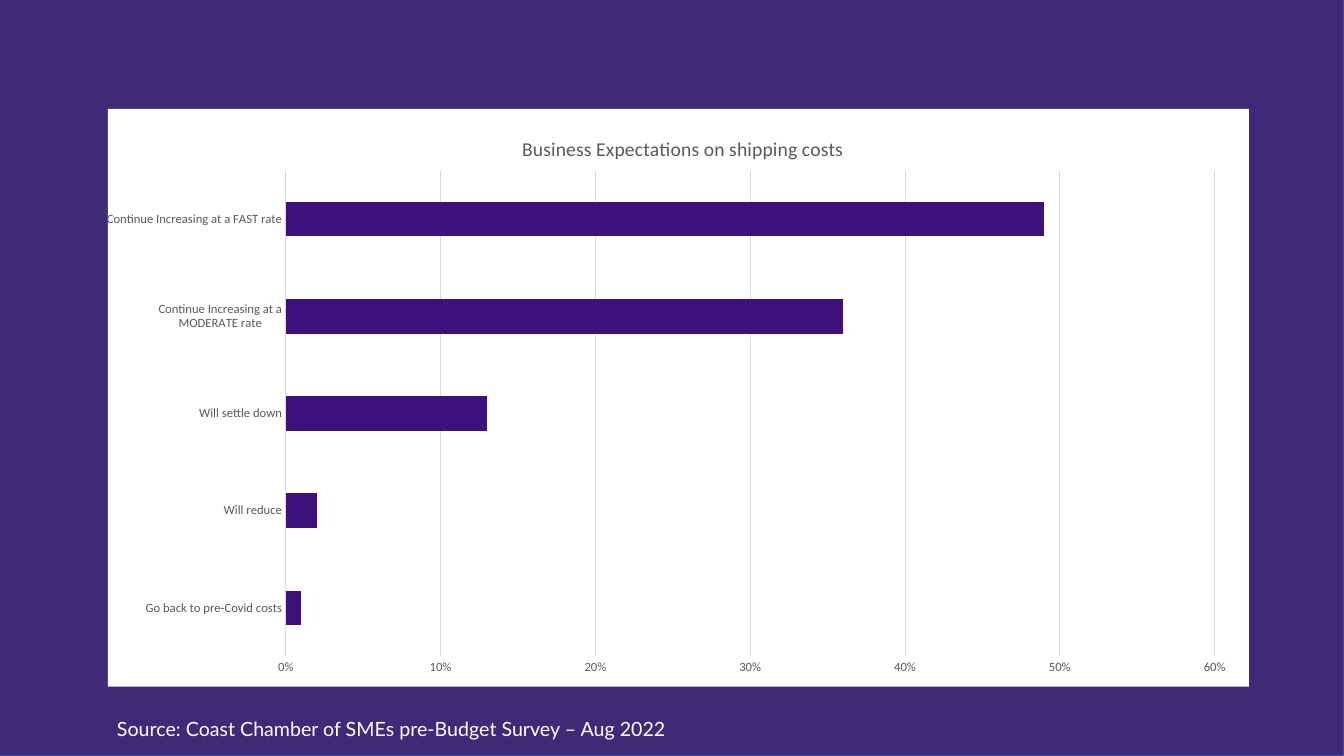
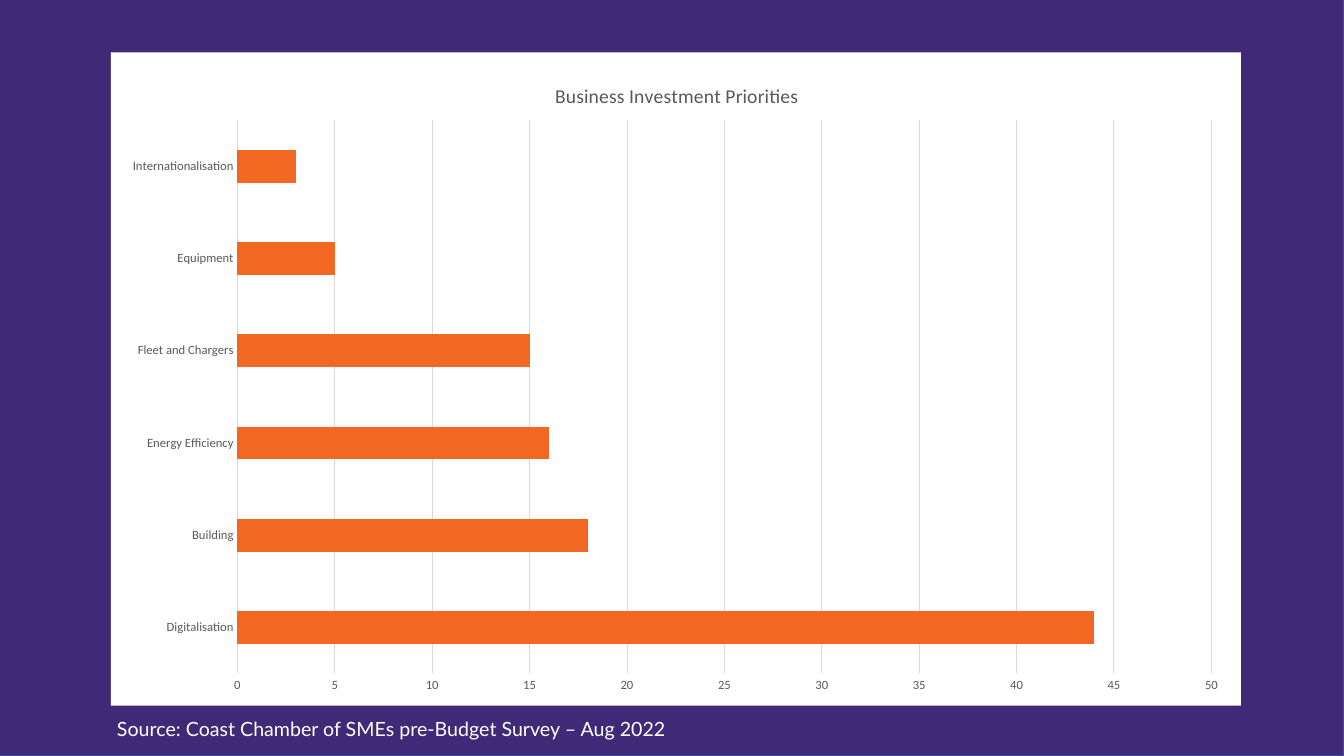
from dataclasses import dataclass

from lxml import etree
from pptx import Presentation
from pptx.chart.chart import Chart
from pptx.chart.data import CategoryChartData
from pptx.dml.color import RGBColor
from pptx.enum.chart import XL_CHART_TYPE, XL_TICK_MARK
from pptx.enum.shapes import MSO_SHAPE
from pptx.enum.text import MSO_ANCHOR, MSO_AUTO_SIZE, PP_ALIGN
from pptx.oxml import parse_xml
from pptx.oxml.ns import nsdecls, qn
from pptx.slide import Slide
from pptx.util import Pt

BAR = XL_CHART_TYPE.BAR_CLUSTERED
NO_TICK = XL_TICK_MARK.NONE
RECT = MSO_SHAPE.RECTANGLE
MIDDLE = MSO_ANCHOR.MIDDLE
NO_FIT = MSO_AUTO_SIZE.NONE
LEFT = PP_ALIGN.LEFT

TITLE_ONLY = 5
COLORS = {
    "backdrop": "402A78",
    "edge": "325491",
    "white": "FFFFFF",
    "text": "595959",
    "grid": "D9D9D9",
    "purple": "3C117C",
    "orange": "F26722",
}
SOURCE = "Source: Coast Chamber of SMEs pre-Budget Survey – Aug 2022"


@dataclass
class Box:
    x: float
    y: float
    w: float
    h: float

    def emu(self) -> tuple[Pt, Pt, Pt, Pt]:
        return Pt(self.x), Pt(self.y), Pt(self.w), Pt(self.h)


@dataclass
class BarChart:
    title: str
    box: Box
    plot: Box
    title_x: float
    values: dict[str, float]
    color: str
    maximum: float
    step: float
    number_format: str


BACKDROP = Box(-1.44, -3.6, 961.2, 543.6)
FOOTER = Box(76.3, 509, 602.6, 25.2)
TITLE_Y = 0.04

CHARTS = [
    BarChart(
        "Business Expectations on shipping costs",
        Box(76.3, 77.8, 815.8, 412.6),
        Box(0.156, 0.107, 0.814, 0.841),
        0.36,
        {
            "Go back to pre-Covid costs": 0.01,
            "Will reduce": 0.02,
            "Will settle down": 0.13,
            "Continue Increasing at a MODERATE rate": 0.36,
            "Continue Increasing at a FAST rate": 0.49,
        },
        "purple", 0.6, 0.1, "0%",
    ),
    BarChart(
        "Business Investment Priorities",
        Box(79.2, 37.4, 807.1, 466.6),
        Box(0.112, 0.104, 0.862, 0.847),
        0.39,
        {
            "Digitalisation": 44,
            "Building": 18,
            "Energy Efficiency": 16,
            "Fleet and Chargers": 15,
            "Equipment": 5,
            "Internationalisation": 3,
        },
        "orange", 50, 5, "General",
    ),
]


def rgb(name: str) -> RGBColor:
    return RGBColor.from_string(COLORS[name])


def set_font(font, name: str, size: float, color: str) -> None:
    font.name = name
    font.size = Pt(size)
    font.bold = False
    font.color.rgb = rgb(color)


def set_line(line, color: str, width: float) -> None:
    line.color.rgb = rgb(color)
    line.width = Pt(width)


def set_layout(parent, index: int, settings: dict[str, str]) -> None:
    old = parent.find(qn("c:layout"))
    if old is not None:
        parent.remove(old)
    layout = parse_xml(f"<c:layout {nsdecls('c')}><c:manualLayout/></c:layout>")
    for tag, value in settings.items():
        etree.SubElement(layout[0], qn(f"c:{tag}")).set("val", value)
    parent.insert(index, layout)


def fill_chart_area(chart: Chart) -> None:
    area = parse_xml(
        f"<c:spPr {nsdecls('c', 'a')}><a:solidFill>"
        f'<a:srgbClr val="{COLORS["white"]}"/></a:solidFill>'
        "<a:ln><a:noFill/></a:ln></c:spPr>"
    )
    chart.element.find(qn("c:txPr")).addprevious(area)


def add_backdrop(s: Slide) -> None:
    sp = s.shapes.add_shape(RECT, *BACKDROP.emu())
    sp.shadow.inherit = False
    sp.fill.solid()
    sp.fill.fore_color.rgb = rgb("backdrop")
    set_line(sp.line, "edge", 1)
    s.shapes.title.element.addprevious(sp.element)


def set_source(s: Slide) -> None:
    sp = s.shapes.title
    sp.left, sp.top, sp.width, sp.height = FOOTER.emu()
    tf = sp.text_frame
    tf.text = SOURCE
    tf.word_wrap = True
    tf.auto_size = NO_FIT
    tf.vertical_anchor = MIDDLE
    p = tf.paragraphs[0]
    p.alignment = LEFT
    p.line_spacing = 0.9
    set_font(p.font, "Lato", 14, "white")


def style_axes(chart: Chart, item: BarChart) -> None:
    cat, val = chart.category_axis, chart.value_axis
    for axis in (cat, val):
        axis.major_tick_mark = NO_TICK
        axis.minor_tick_mark = NO_TICK
        set_font(axis.tick_labels.font, "Calibri", 9, "text")
    cat.has_major_gridlines = False
    set_line(cat.format.line, "grid", 0.75)
    val.minimum_scale = 0
    val.maximum_scale = item.maximum
    val.major_unit = item.step
    val.has_major_gridlines = True
    set_line(val.major_gridlines.format.line, "grid", 0.75)
    val.format.line.fill.background()
    val.tick_labels.number_format = item.number_format
    val.tick_labels.number_format_is_linked = False


def add_bar_chart(s: Slide, item: BarChart) -> None:
    data = CategoryChartData(number_format=item.number_format)
    data.categories = list(item.values)
    data.add_series("Series 1", list(item.values.values()))
    chart = s.shapes.add_chart(BAR, *item.box.emu(), data).chart
    chart.has_legend = False
    chart.font.name = "Calibri"
    chart.font.size = Pt(10)
    fill_chart_area(chart)

    chart.has_title = True
    tf = chart.chart_title.text_frame
    tf.text = item.title
    set_font(tf.paragraphs[0].font, "Calibri", 14, "text")
    set_layout(chart.chart_title.element, 1, {
        "xMode": "edge", "yMode": "edge",
        "x": str(item.title_x), "y": str(TITLE_Y),
    })

    plot = chart.plots[0]
    plot.gap_width = 182
    plot.vary_by_categories = False
    fill = plot.series[0].format.fill
    fill.solid()
    fill.fore_color.rgb = rgb(item.color)
    style_axes(chart, item)
    area = chart.element.find(f"{qn('c:chart')}/{qn('c:plotArea')}")
    set_layout(area, 0, {
        "layoutTarget": "inner", "xMode": "edge", "yMode": "edge",
        "x": str(item.plot.x), "y": str(item.plot.y),
        "w": str(item.plot.w), "h": str(item.plot.h),
    })


def main() -> None:
    prs = Presentation()
    prs.slide_width, prs.slide_height = Pt(960), Pt(540)
    for item in CHARTS:
        s = prs.slides.add_slide(prs.slide_layouts[TITLE_ONLY])
        add_backdrop(s)
        set_source(s)
        add_bar_chart(s, item)
    prs.save("out.pptx")


if __name__ == "__main__":
    main()
